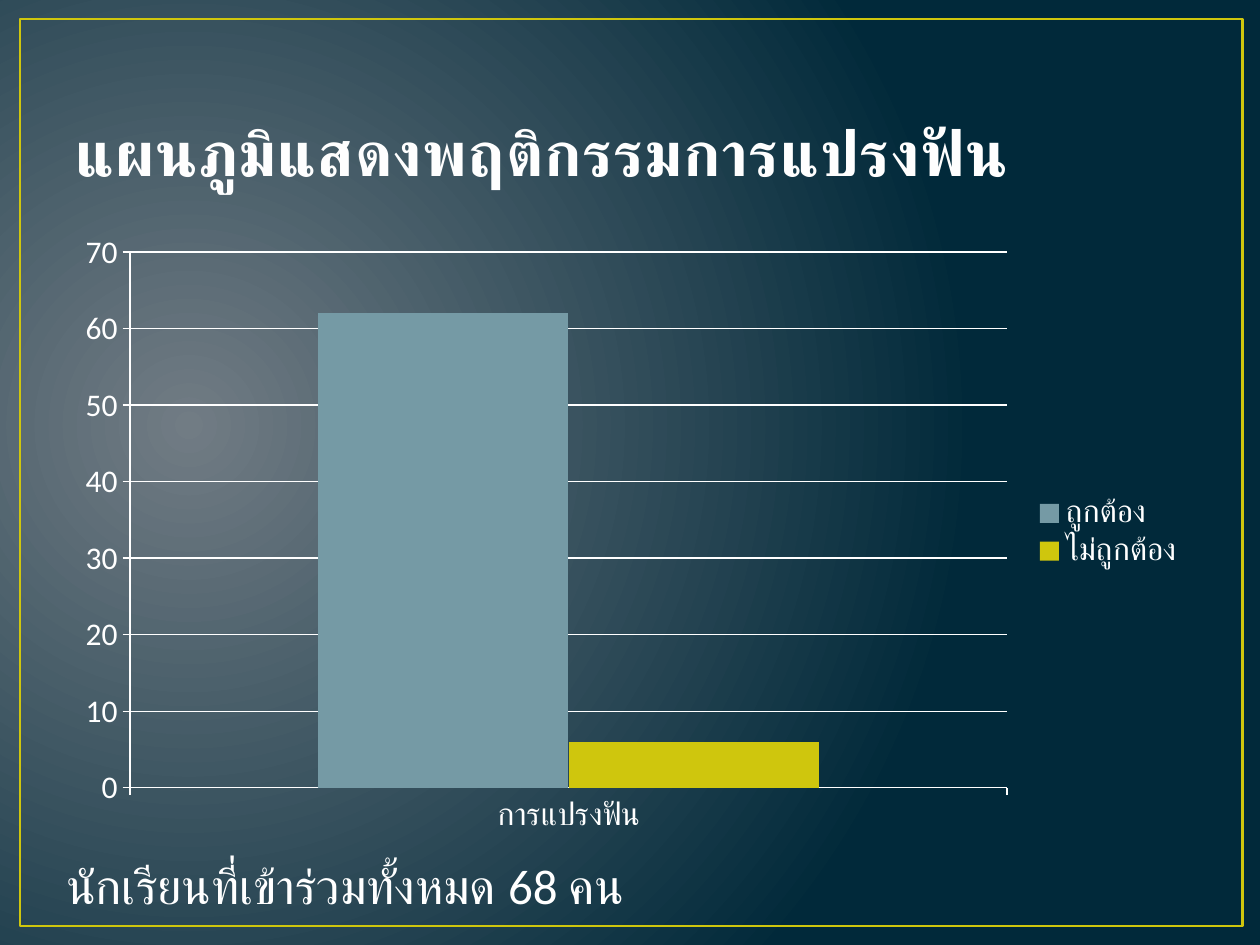
"""Build a slide with a column chart of tooth-brushing behaviour."""
from dataclasses import dataclass
from typing import Any

import lxml.etree
import pptx
import pptx.chart.data
import pptx.dml.color
import pptx.enum.chart
import pptx.enum.dml
import pptx.enum.shapes
import pptx.enum.text
import pptx.oxml
import pptx.oxml.ns
import pptx.util

RGBColor = pptx.dml.color.RGBColor
WHITE = RGBColor(0xFF, 0xFF, 0xFF)
TITLE_WHITE = RGBColor(0xFE, 0xFE, 0xFE)
TITLE_OUTLINE = RGBColor(0x38, 0x4F, 0x55)
GLOW = RGBColor(0x71, 0x7C, 0x84)
NAVY = RGBColor(0x01, 0x29, 0x3A)
TEAL = RGBColor(0x75, 0x9A, 0xA5)
YELLOW = RGBColor(0xCF, 0xC6, 0x0D)
FONT_NAME = "Calibri"
SLIDE_WIDTH = pptx.util.Inches(10)
SLIDE_HEIGHT = pptx.util.Inches(7.5)
NAMESPACE = pptx.oxml.ns.nsdecls("a")


@dataclass(frozen=True)
class Area:
    """Position and size as percentages of the slide."""

    left: float
    top: float
    width: float
    height: float

    def lengths(self) -> dict[str, int]:
        """Return the lengths by attribute name."""
        return {
            "left": int(SLIDE_WIDTH * self.left / 100),
            "top": int(SLIDE_HEIGHT * self.top / 100),
            "width": int(SLIDE_WIDTH * self.width / 100),
            "height": int(SLIDE_HEIGHT * self.height / 100),
        }


@dataclass(frozen=True)
class Answer:
    """One chart series."""

    name: str
    count: int
    color: RGBColor


FRAME = Area(1.6, 2, 97, 96)
TITLE = Area(5, 4, 90, 16.67)
CHART = Area(5, 23.33, 90, 66)
CAPTION = Area(4.3, 89.87, 78, 7.6)
ANSWERS = (Answer("ถูกต้อง", 62, TEAL), Answer("ไม่ถูกต้อง", 6, YELLOW))


def apply(target: Any, values: dict[str, Any]) -> None:
    """Set every named attribute on the target."""
    for name, value in values.items():
        setattr(target, name, value)


def format_font(font: Any, size: float, color: RGBColor, bold: bool = False) -> None:
    """Format a font in the slide's typeface."""
    apply(font, {"name": FONT_NAME, "size": pptx.util.Pt(size), "bold": bold})
    font.color.rgb = color


def paint_background(slide: Any) -> None:
    """Fill the background with a circular gradient."""
    fill = slide.background.fill
    fill.gradient()
    for stop, color, position in zip(fill.gradient_stops, (GLOW, NAVY), (0, 1)):
        stop.color.rgb = color
        stop.position = position
    gradient = slide.background._cSld.find(".//" + pptx.oxml.ns.qn("a:gradFill"))
    linear = gradient.find(pptx.oxml.ns.qn("a:lin"))
    circle = pptx.oxml.parse_xml(
        f'<a:path {NAMESPACE} path="circle">'
        '<a:fillToRect l="15000" t="50000" r="85000" b="60000"/></a:path>'
    )
    gradient.replace(linear, circle)


def add_frame(slide: Any) -> None:
    """Add the thin border."""
    frame = slide.shapes.add_shape(
        pptx.enum.shapes.MSO_SHAPE.RECTANGLE, **FRAME.lengths()
    )
    frame.shadow.inherit = False
    frame.fill.background()
    frame.line.color.rgb = YELLOW
    frame.line.width = pptx.util.Pt(1.5)


def write_title(slide: Any, text: str) -> None:
    """Place and format the title placeholder."""
    title = slide.shapes.title
    apply(title, TITLE.lengths())
    apply(title.text_frame, {
        "text": text,
        "word_wrap": True,
        "vertical_anchor": pptx.enum.text.MSO_ANCHOR.BOTTOM,
    })
    paragraph = title.text_frame.paragraphs[0]
    paragraph.alignment = pptx.enum.text.PP_ALIGN.LEFT
    run = paragraph.runs[0]
    format_font(run.font, 36, TITLE_WHITE, bold=True)
    properties = run._r.get_or_add_rPr()
    properties.set("spc", "50")
    properties.insert(0, pptx.oxml.parse_xml(
        f'<a:ln {NAMESPACE} w="{int(pptx.util.Pt(1.05))}"><a:solidFill>'
        f'<a:srgbClr val="{TITLE_OUTLINE}"/></a:solidFill></a:ln>'
    ))


def add_answer_chart(slide: Any, category: str) -> None:
    """Add the clustered column chart."""
    chart_data = pptx.chart.data.CategoryChartData()
    chart_data.categories = [category]
    for answer in ANSWERS:
        chart_data.add_series(answer.name, [answer.count])
    area = CHART.lengths()
    chart = slide.shapes.add_chart(
        pptx.enum.chart.XL_CHART_TYPE.COLUMN_CLUSTERED,
        area["left"], area["top"], area["width"], area["height"], chart_data,
    ).chart
    format_font(chart.font, 18, WHITE)
    apply(chart, {"has_title": False, "has_legend": True})
    apply(chart.legend, {
        "position": pptx.enum.chart.XL_LEGEND_POSITION.RIGHT,
        "include_in_layout": False,
    })
    plot = chart.plots[0]
    apply(plot, {"gap_width": 150, "vary_by_categories": False})
    for series, answer in zip(plot.series, ANSWERS):
        series.format.fill.solid()
        series.format.fill.fore_color.rgb = answer.color
    for axis in (chart.category_axis, chart.value_axis):
        axis.major_tick_mark = pptx.enum.chart.XL_TICK_MARK.OUTSIDE
        axis.format.line.color.rgb = WHITE
    chart.value_axis.has_major_gridlines = True
    chart.value_axis.major_gridlines.format.line.color.rgb = WHITE


def add_caption(slide: Any, text: str) -> None:
    """Add the line of text below the chart."""
    frame = slide.shapes.add_textbox(**CAPTION.lengths()).text_frame
    apply(frame, {
        "text": text,
        "word_wrap": True,
        "auto_size": pptx.enum.text.MSO_AUTO_SIZE.SHAPE_TO_FIT_TEXT,
    })
    format_font(frame.paragraphs[0].runs[0].font, 28, WHITE)


def main() -> None:
    """Build and save the presentation."""
    presentation = pptx.Presentation()
    apply(presentation, {"slide_width": SLIDE_WIDTH, "slide_height": SLIDE_HEIGHT})
    slide = presentation.slides.add_slide(presentation.slide_layouts[5])
    paint_background(slide)
    add_frame(slide)
    write_title(slide, "แผนภูมิแสดงพฤติกรรมการแปรงฟัน")
    add_answer_chart(slide, "การแปรงฟัน")
    add_caption(slide, "นักเรียนที่เข้าร่วมทั้งหมด 68 คน")
    presentation.save("out.pptx")


if __name__ == "__main__":
    main()
